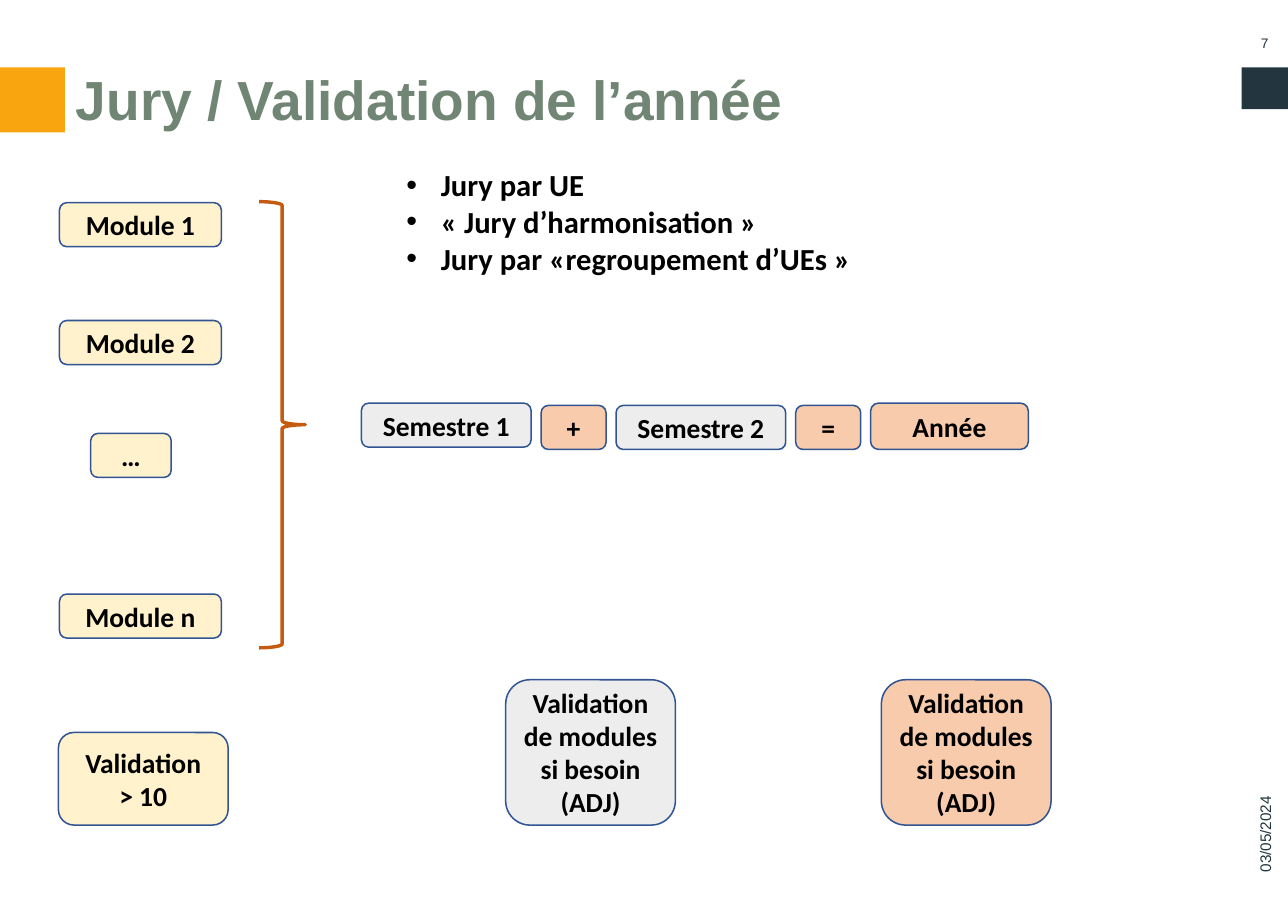
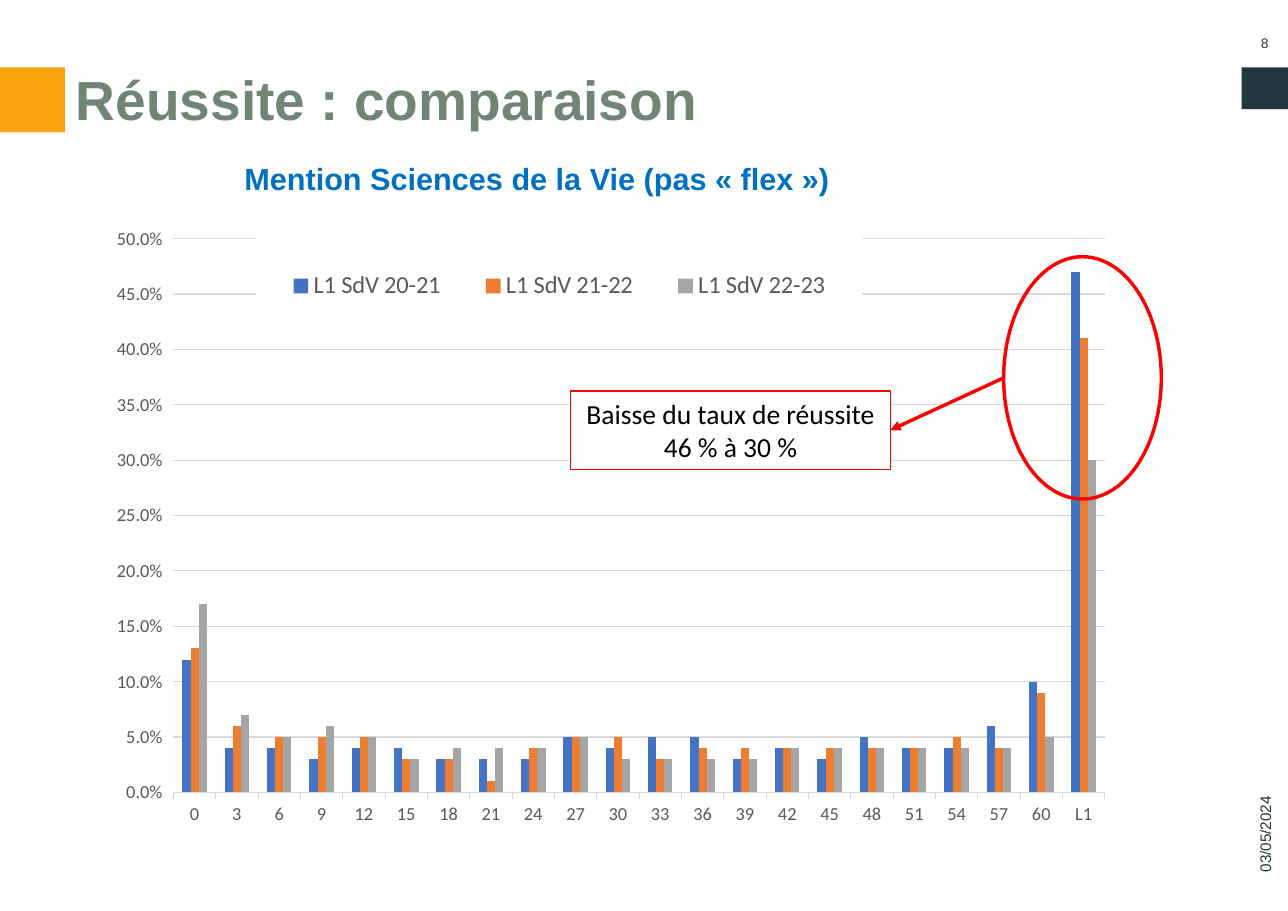
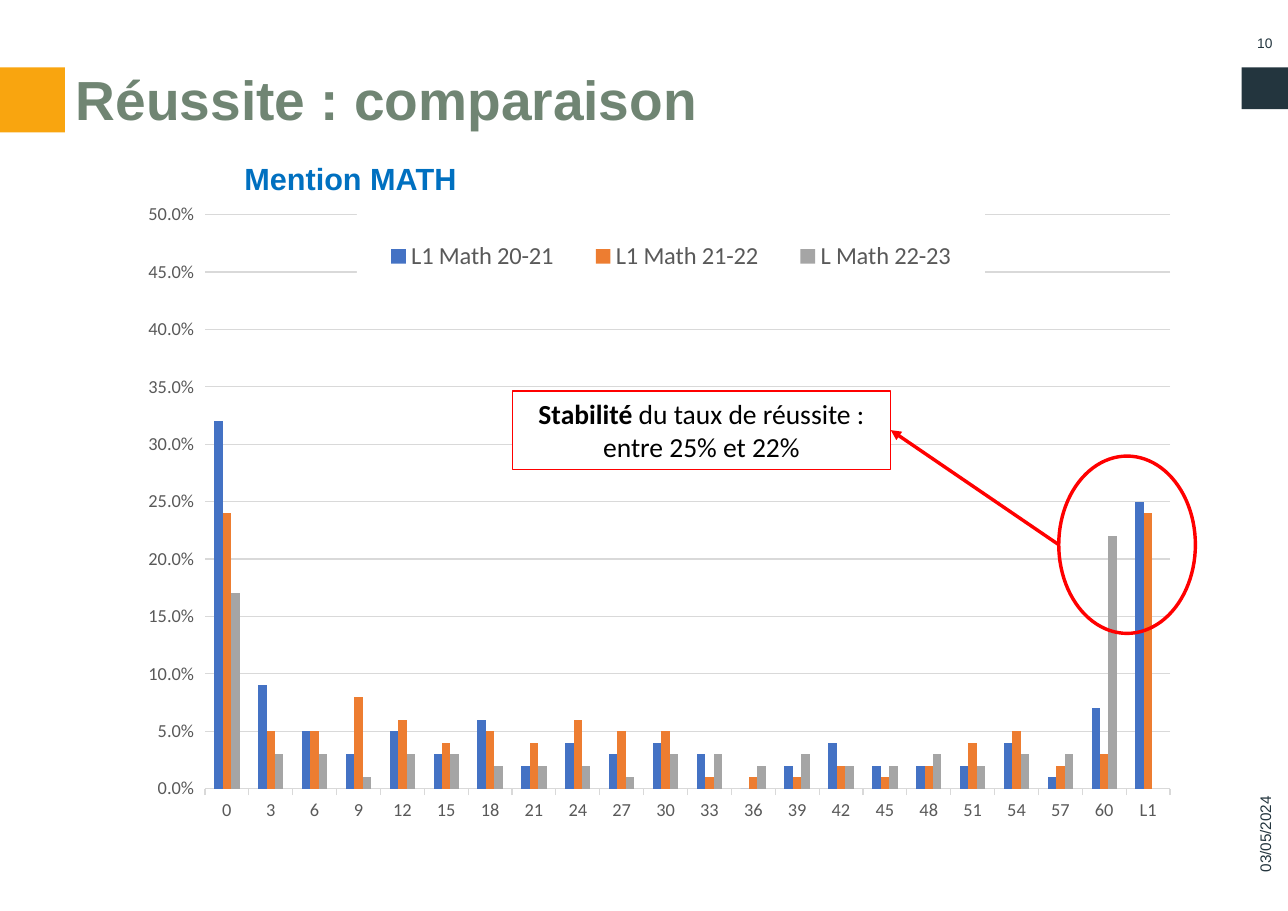
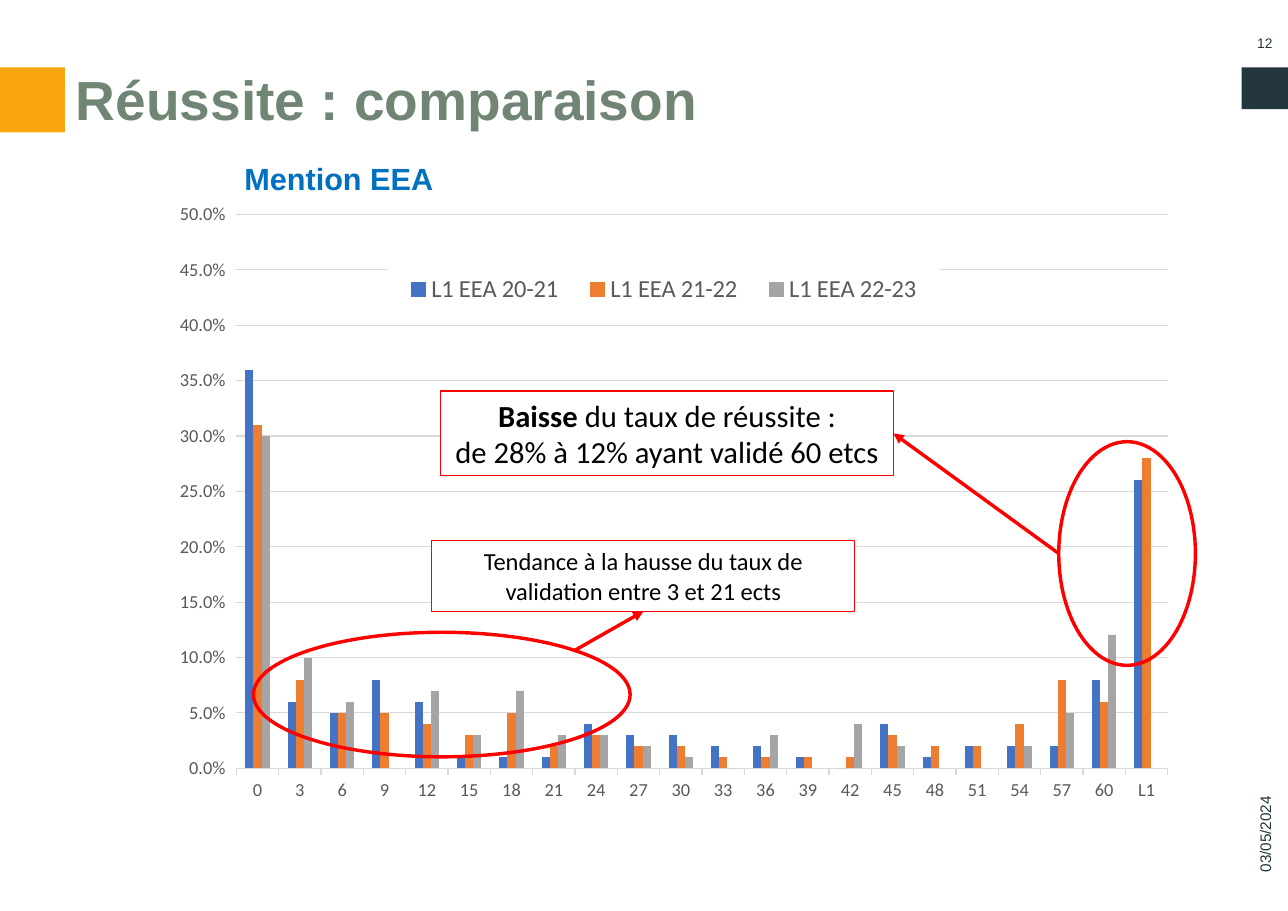
from pptx import Presentation
from pptx.chart.data import CategoryChartData
from pptx.dml.color import RGBColor
from pptx.enum.chart import XL_CHART_TYPE, XL_LEGEND_POSITION
from pptx.enum.shapes import MSO_CONNECTOR, MSO_SHAPE
from pptx.enum.text import MSO_ANCHOR, PP_ALIGN
from pptx.oxml import parse_xml
from pptx.oxml.ns import nsdecls
from pptx.util import Pt

COLORS = {
    "accent": "F9A50F", "dark": "23353E", "title": "708573", "mention": "0070C0",
    "black": "000000", "white": "FFFFFF", "red": "FF0000", "outline": "325491",
    "module": "FFF2CC", "semester": "EDEDED", "year": "F8CBAD", "brace": "C55A11",
    "axis": "595959", "grid": "D9D9D9",
    "first": "4472C4", "second": "ED7D31", "third": "A5A5A5",
}
PAGE_WIDTH, PAGE_HEIGHT = 841.68, 595.44
CATEGORIES = [str(credits) for credits in range(0, 61, 3)] + ["L1"]
DATE = "03/05/2024"


def color(name):
    return RGBColor.from_string(COLORS[name])


def points(box):
    return [Pt(value) for value in box]


def style_font(font, size, name, shade, bold=False):
    font.size, font.name, font.bold = Pt(size), name, bold
    font.color.rgb = color(shade)


def write(shape, lines, size, name="Calibri", shade="black", bold=False,
          align=PP_ALIGN.LEFT, anchor=MSO_ANCHOR.TOP):
    frame = shape.text_frame
    frame.word_wrap = True
    frame.vertical_anchor = anchor
    frame.text = "\n".join(lines)
    for para in frame.paragraphs:
        para.alignment = align
        for span in para.runs:
            style_font(span.font, size, name, shade, bold)


def add_text(page, box, lines, size, **style):
    shape = page.shapes.add_textbox(*points(box))
    write(shape, lines, size, **style)
    return shape


def add_figure(page, kind, box, fill=None, line=None, width=1):
    shape = page.shapes.add_shape(kind, *points(box))
    shape.shadow.inherit = False
    if fill:
        shape.fill.solid()
        shape.fill.fore_color.rgb = color(fill)
    else:
        shape.fill.background()
    if line:
        shape.line.color.rgb = color(line)
        shape.line.width = Pt(width)
    else:
        shape.line.fill.background()
    return shape


def add_page(deck, number, title):
    page = deck.slides.add_slide(deck.slide_layouts[6])
    add_figure(page, MSO_SHAPE.RECTANGLE, (0, 44, 42.5, 42.5), "accent")
    add_figure(page, MSO_SHAPE.RECTANGLE, (811.4, 44, 30.28, 27.3), "dark")
    add_text(page, (811.4, 12.2, 30.28, 31.7), [str(number)], 9, name="Arial",
             shade="dark", align=PP_ALIGN.CENTER, anchor=MSO_ANCHOR.MIDDLE)
    heading = add_text(page, (42.5, 44, 738, 95), [title], 36, name="Arial",
                       shade="title", bold=True)
    heading.text_frame.paragraphs[0].line_spacing = 0.9
    date = add_text(page, (791.3, 533.5, 70.6, 30.2), [DATE], 10, name="Arial",
                    shade="dark", align=PP_ALIGN.RIGHT, anchor=MSO_ANCHOR.MIDDLE)
    date.rotation = 270
    return page


def add_pill(page, box, lines, fill):
    pill = add_figure(page, MSO_SHAPE.ROUNDED_RECTANGLE, box, fill, "outline")
    write(pill, lines, 18, bold=True, align=PP_ALIGN.CENTER, anchor=MSO_ANCHOR.MIDDLE)


def add_modules(page, left, top):
    rows = [("Module 1", 0, 0, 105.8), ("Module 2", 77, 0, 105.8),
            ("…", 150.8, 20.4, 52.6), ("Module n", 255.8, 0, 105.8)]
    for label, down, indent, width in rows:
        add_pill(page, (left + indent, top + down, width, 28.8), [label], "module")
    add_figure(page, MSO_SHAPE.RIGHT_BRACE, (left + 130.4, top - 0.7, 30.2, 291.6),
               line="brace", width=2.25)


def add_equation(page, left, top):
    terms = [("Semestre 1", 110.9, 0, 28.8, "semester"), ("+", 42.5, 1.5, 28.8, "year"),
             ("Semestre 2", 110.9, 1.5, 28.8, "semester"), ("=", 42.5, 1.5, 28.8, "year"),
             ("Année", 103, 0, 30.2, "year")]
    for label, width, down, height, fill in terms:
        add_pill(page, (left, top + down, width, height), [label], fill)
        left += width + 6.5


def add_validations(page, bottom):
    adjusted = ["Validation de modules si besoin (ADJ)"]
    for left, height, lines, fill in [(38.2, 60.5, ["Validation", "> 10"], "module"),
                                      (330.5, 95, adjusted, "semester"),
                                      (576, 95, adjusted, "year")]:
        add_pill(page, (left, bottom - height, 110.9, height), lines, fill)


def add_bullets(page, box, lines):
    shape = add_text(page, box, lines, 20, bold=True)
    for para in shape.text_frame.paragraphs:
        props = para._p.get_or_add_pPr()
        props.set("marL", str(Pt(22.5)))
        props.set("indent", str(-Pt(22.5)))
        props.append(parse_xml(f'<a:buFont {nsdecls("a")} typeface="Arial"/>'))
        props.append(parse_xml(f'<a:buChar {nsdecls("a")} char="•"/>'))


def build_jury(deck):
    page = add_page(deck, 7, "Jury / Validation de l’année")
    add_modules(page, 38.9, 132.5)
    add_equation(page, 236.2, 263.5)
    add_validations(page, 539.3)
    add_bullets(page, (258.5, 105.1, 307.4, 80),
                ["Jury par UE", "« Jury d’harmonisation »", "Jury par «regroupement d’UEs »"])


def set_layout(parent, position, x, y, w, h, target=""):
    for old in parent.xpath("./c:layout"):
        parent.remove(old)
    parent.insert(position, parse_xml(
        f'<c:layout {nsdecls("c")}><c:manualLayout>{target}'
        '<c:xMode val="edge"/><c:yMode val="edge"/>'
        f'<c:x val="{x}"/><c:y val="{y}"/><c:w val="{w}"/><c:h val="{h}"/>'
        '</c:manualLayout></c:layout>'))


def fill_white(parent):
    parent.xpath("./c:txPr")[0].addprevious(parse_xml(
        f'<c:spPr {nsdecls("c", "a")}><a:solidFill><a:srgbClr val="{COLORS["white"]}"/>'
        '</a:solidFill><a:ln><a:noFill/></a:ln></c:spPr>'))


def add_rates(page, box, series, plot_left, legend_box):
    data = CategoryChartData(number_format="0.0%")
    data.categories = CATEGORIES
    for name, percents in series:
        data.add_series(name, [percent / 100 for percent in percents])
    chart = page.shapes.add_chart(XL_CHART_TYPE.COLUMN_CLUSTERED, *points(box), data).chart
    chart.has_title = False
    style_font(chart.font, 12, "Calibri", "black")
    plot = chart.plots[0]
    plot.gap_width, plot.overlap, plot.vary_by_categories = 219, 0, False
    for bars, shade in zip(plot.series, ("first", "second", "third")):
        bars.format.fill.solid()
        bars.format.fill.fore_color.rgb = color(shade)
    rates, credits = chart.value_axis, chart.category_axis
    for axis in (rates, credits):
        style_font(axis.tick_labels.font, 12, "Calibri", "axis")
    rates.minimum_scale, rates.maximum_scale, rates.major_unit = 0, 0.5, 0.05
    rates.tick_labels.number_format = "0.0%"
    rates.tick_labels.number_format_is_linked = False
    rates.format.line.fill.background()
    for line in (rates.major_gridlines.format.line, credits.format.line):
        line.color.rgb = color("grid")
        line.width = Pt(0.75)
    chart.has_legend = True
    chart.legend.position = XL_LEGEND_POSITION.BOTTOM
    chart.legend.include_in_layout = False
    style_font(chart.legend.font, 16, "Calibri", "axis")
    legend = chart.element.xpath(".//c:legend")[0]
    set_layout(legend, 1, *legend_box)
    set_layout(chart.element.xpath(".//c:plotArea")[0], 0, plot_left, 0.087, 0.876, 0.798,
               '<c:layoutTarget val="inner"/>')
    fill_white(legend)
    fill_white(chart.element)


def spot(box, across, down):
    left, top, width, height = box
    return left + across * width, top + down * height


def add_remark(page, ring, note, lines, size, lead="", note_spot=(1, 0.5), ring_spot=(0, 0.5)):
    add_figure(page, MSO_SHAPE.OVAL, ring, line="red", width=2.25)
    callout = add_text(page, note, lines, size, align=PP_ALIGN.CENTER)
    callout.fill.solid()
    callout.fill.fore_color.rgb = color("white")
    callout.line.color.rgb = color("red")
    callout.line.width = Pt(0.75)
    if lead:
        para = callout.text_frame.paragraphs[0]
        rest = para.runs[0].text
        para.runs[0].text = lead
        para.add_run().text = rest
        for span, bold in zip(para.runs, (True, False)):
            style_font(span.font, size, "Calibri", "black", bold)
    ends = spot(note, *note_spot) + spot(ring, *ring_spot)
    arrow = page.shapes.add_connector(MSO_CONNECTOR.STRAIGHT, *points(ends))
    arrow.line.color.rgb = color("red")
    arrow.line.width = Pt(2.25)
    props = arrow.element.spPr
    props.get_or_add_ln().append(parse_xml(f'<a:headEnd {nsdecls("a")} type="triangle"/>'))
    props.append(parse_xml(f'<a:effectLst {nsdecls("a")}/>'))


def build_comparison(deck, number, mention, chart, remarks):
    page = add_page(deck, number, "Réussite : comparaison")
    add_rates(page, **chart)
    add_text(page, (152.6, 100.8, 420, 31.7), [mention], 20, name="Arial",
             shade="mention", bold=True)
    for remark in remarks:
        add_remark(page, **remark)


LIFE = {
    "box": (42.5, 116.6, 694.8, 453.6), "plot_left": 0.102,
    "legend_box": (0.18, 0.08, 0.57, 0.15),
    "series": [
        ("L1 SdV 20-21", [12, 4, 4, 3, 4, 4, 3, 3, 3, 5, 4, 5, 5, 3, 4, 3, 5, 4, 4, 6, 10, 47]),
        ("L1 SdV 21-22", [13, 6, 5, 5, 5, 3, 3, 1, 4, 5, 5, 3, 4, 4, 4, 4, 4, 4, 5, 4, 9, 41]),
        ("L1 SdV 22-23", [17, 7, 5, 6, 5, 3, 4, 4, 4, 5, 3, 3, 3, 3, 4, 4, 4, 4, 4, 4, 5, 30]),
    ],
}
MATHS = {
    "box": (60.5, 99.4, 720, 470.2), "plot_left": 0.102,
    "legend_box": (0.24, 0.08, 0.57, 0.13),
    "series": [
        ("L1 Math 20-21", [32, 9, 5, 3, 5, 3, 6, 2, 4, 3, 4, 3, 0, 2, 4, 2, 2, 2, 4, 1, 7, 25]),
        ("L1 Math 21-22", [24, 5, 5, 8, 6, 4, 5, 4, 6, 5, 5, 1, 1, 1, 2, 1, 2, 4, 5, 2, 3, 24]),
        ("L Math 22-23", [17, 3, 3, 1, 3, 3, 2, 2, 2, 1, 3, 3, 2, 3, 2, 2, 3, 2, 3, 3, 22]),
    ],
}
ELECTRONICS = {
    "box": (86.4, 100.8, 694.8, 453.6), "plot_left": 0.098,
    "legend_box": (0.24, 0.15, 0.52, 0.09),
    "series": [
        ("L1 EEA 20-21", [36, 6, 5, 8, 6, 1, 1, 1, 4, 3, 3, 2, 2, 1, 0, 4, 1, 2, 2, 2, 8, 26]),
        ("L1 EEA 21-22", [31, 8, 5, 5, 4, 3, 5, 2, 3, 2, 2, 1, 1, 1, 1, 3, 2, 2, 4, 8, 6, 28]),
        ("L1 EEA 22-23", [30, 10, 6, 0, 7, 3, 7, 3, 3, 2, 1, 0, 3, 0, 4, 2, 0, 0, 2, 5, 12]),
    ],
}


def main():
    deck = Presentation()
    deck.slide_width, deck.slide_height = Pt(PAGE_WIDTH), Pt(PAGE_HEIGHT)
    build_jury(deck)
    build_comparison(deck, 8, "Mention Sciences de la Vie (pas « flex »)", LIFE, [
        {"ring": (655.9, 167.8, 103, 158.4), "note": (373, 255.6, 208.8, 51.1), "size": 18,
         "lines": ["Baisse du taux de réussite 46 % à 30 %"]}])
    build_comparison(deck, 10, "Mention MATH", MATHS, [
        {"ring": (691.9, 298.1, 89.3, 115.9), "note": (334.8, 255.6, 247.3, 51.1), "size": 18,
         "lead": "Stabilité", "lines": [" du taux de réussite : entre 25% et 22%"]}])
    build_comparison(deck, 12, "Mention EEA", ELECTRONICS, [
        {"ring": (691.9, 288.7, 89.3, 146.2), "note": (288, 255.6, 295.9, 55.4), "size": 20,
         "lead": "Baisse",
         "lines": [" du taux de réussite :", "de 28% à 12% ayant validé 60 etcs"]},
        {"ring": (165.6, 413.3, 246.2, 81.4), "note": (282.2, 353.5, 276.5, 46.1), "size": 16,
         "lines": ["Tendance à la hausse du taux de validation entre 3 et 21 ects"],
         "note_spot": (0.5, 1), "ring_spot": (0.85, 0.15)}])
    deck.save("out.pptx")


if __name__ == "__main__":
    main()
